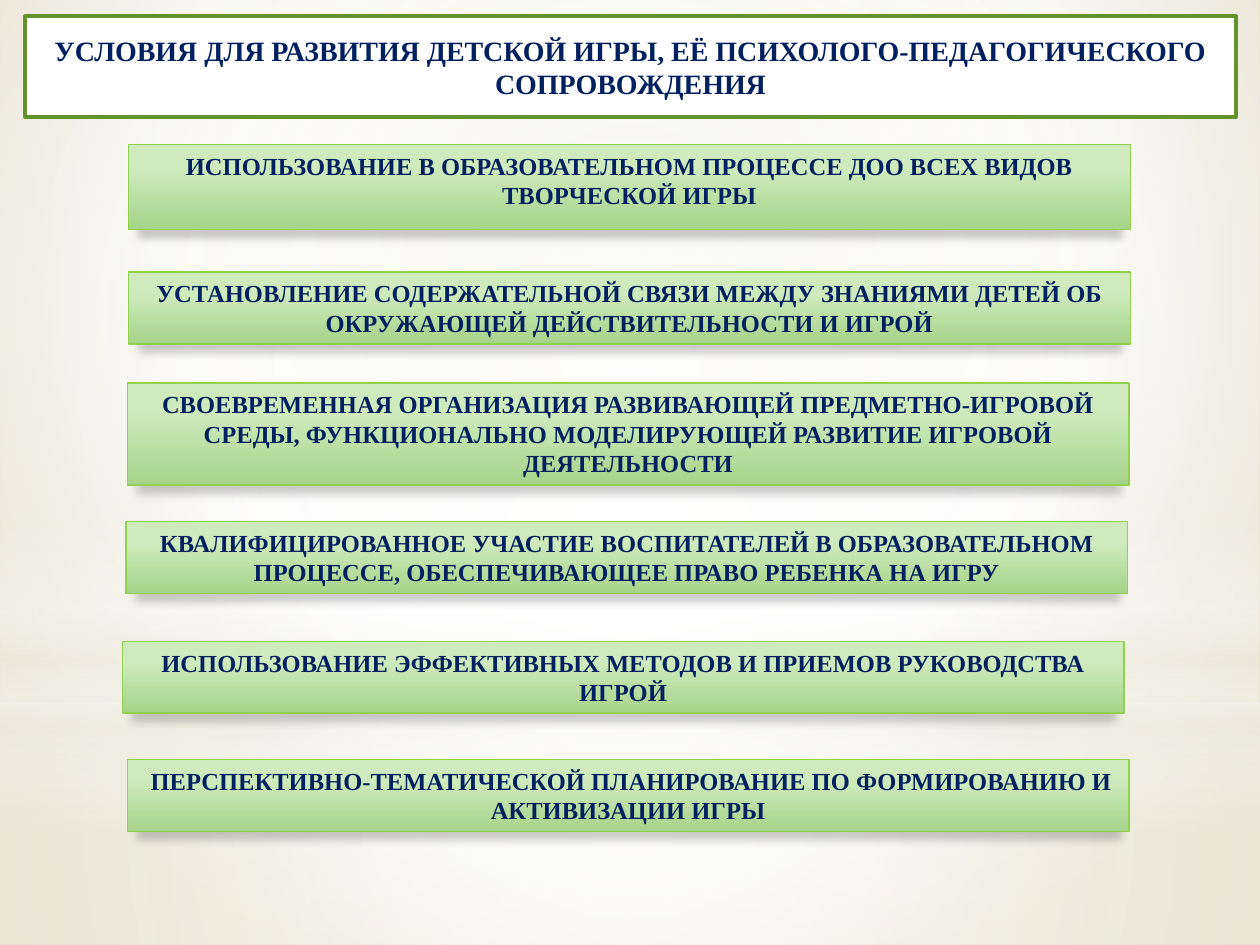
from lxml.etree import SubElement
from pptx import Presentation
from pptx.dml.color import RGBColor
from pptx.enum.shapes import MSO_SHAPE
from pptx.enum.text import MSO_ANCHOR, MSO_AUTO_SIZE, PP_ALIGN
from pptx.oxml.ns import qn
from pptx.util import Inches, Pt

COLORS = {
    "white": "FFFFFF",
    "cream": "EEECE1",
    "sand": "E7E4D4",
    "straw": "D5CC9F",
    "navy": "002060",
    "frame": "61942A",
    "edge": "92D050",
    "light": "CFEBBE",
    "leaf": "A6D389",
    "shadow": "000000",
}
CELL = 0.1
CENTER = (50, 50, 50, 50)

HEADING = "УСЛОВИЯ ДЛЯ РАЗВИТИЯ ДЕТСКОЙ ИГРЫ, ЕЁ ПСИХОЛОГО-ПЕДАГОГИЧЕСКОГО СОПРОВОЖДЕНИЯ"
CONDITIONS = [
    (10.2, 11.5, 6.7, "ИСПОЛЬЗОВАНИЕ В ОБРАЗОВАТЕЛЬНОМ ПРОЦЕССЕ ДОО ВСЕХ ВИДОВ ТВОРЧЕСКОЙ ИГРЫ"),
    (10.2, 21.6, 5.7, "УСТАНОВЛЕНИЕ СОДЕРЖАТЕЛЬНОЙ СВЯЗИ МЕЖДУ ЗНАНИЯМИ ДЕТЕЙ ОБ "
                      "ОКРУЖАЮЩЕЙ ДЕЙСТВИТЕЛЬНОСТИ И ИГРОЙ"),
    (10.1, 30.4, 8.1, "СВОЕВРЕМЕННАЯ ОРГАНИЗАЦИЯ РАЗВИВАЮЩЕЙ ПРЕДМЕТНО-ИГРОВОЙ СРЕДЫ, "
                      "ФУНКЦИОНАЛЬНО МОДЕЛИРУЮЩЕЙ РАЗВИТИЕ ИГРОВОЙ ДЕЯТЕЛЬНОСТИ"),
    (10, 41.4, 5.7, "КВАЛИФИЦИРОВАННОЕ УЧАСТИЕ ВОСПИТАТЕЛЕЙ В ОБРАЗОВАТЕЛЬНОМ "
                    "ПРОЦЕССЕ, ОБЕСПЕЧИВАЮЩЕЕ ПРАВО РЕБЕНКА НА ИГРУ"),
    (9.7, 50.9, 5.7, "ИСПОЛЬЗОВАНИЕ ЭФФЕКТИВНЫХ МЕТОДОВ И ПРИЕМОВ РУКОВОДСТВА ИГРОЙ"),
    (10.1, 60.3, 5.7, " ПЕРСПЕКТИВНО-ТЕМАТИЧЕСКОЙ ПЛАНИРОВАНИЕ ПО ФОРМИРОВАНИЮ И АКТИВИЗАЦИИ ИГРЫ"),
]


def rgb(name):
    return RGBColor.from_string(COLORS[name])


def add_color(parent, name, opacity):
    color = SubElement(parent, qn("a:srgbClr"), val=COLORS[name])
    if opacity < 100:
        SubElement(color, qn("a:alpha"), val=str(opacity * 1000))


def set_gradient(fill, properties, stops, focus=None):
    fill.solid()
    gradient = properties.find(qn("a:solidFill"))
    gradient.clear()
    gradient.tag = qn("a:gradFill")
    gradient.set("rotWithShape", "1")
    stop_list = SubElement(gradient, qn("a:gsLst"))
    for position, name, opacity in stops:
        stop = SubElement(stop_list, qn("a:gs"), pos=str(position * 1000))
        add_color(stop, name, opacity)
    if focus:
        circle = SubElement(gradient, qn("a:path"), path="circle")
        edges = {side: str(share * 1000) for side, share in zip("ltrb", focus)}
        SubElement(circle, qn("a:fillToRect"), **edges)
    else:
        SubElement(gradient, qn("a:lin"), ang="5400000", scaled="0")


class ConditionsSlide:
    font = "Times New Roman"

    def __init__(self, deck):
        self.slide = deck.slides.add_slide(deck.slide_layouts[6])

    def backdrop(self, stops, focus):
        fill = self.slide.background.fill
        fill.solid()
        properties = self.slide.element.xpath(".//p:bgPr")[0]
        set_gradient(fill, properties, stops, focus)

    def block(self, preset, column, row, columns, rows):
        area = [Inches(cells * CELL) for cells in (column, row, columns, rows)]
        block = self.slide.shapes.add_shape(preset, *area)
        block.shadow.inherit = False
        return block

    def glow(self, preset, row, rows, stops, focus=None):
        glow = self.block(preset, 0, row, 100, rows)
        glow.line.fill.background()
        set_gradient(glow.fill, glow.element.spPr, stops, focus)

    def label(self, block, words, size, anchor):
        frame = block.text_frame
        frame.text = words
        frame.word_wrap = True
        frame.vertical_anchor = anchor
        paragraph = frame.paragraphs[0]
        paragraph.alignment = PP_ALIGN.CENTER
        font = paragraph.runs[0].font
        font.name, font.size, font.bold = self.font, Pt(size), True
        font.color.rgb = rgb("navy")

    def outline(self, block, name, width):
        block.line.color.rgb = rgb(name)
        block.line.width = Pt(width)

    def heading(self, words):
        heading = self.block(MSO_SHAPE.FLOWCHART_PROCESS, 2, 1.3, 96.1, 8)
        heading.fill.solid()
        heading.fill.fore_color.rgb = rgb("white")
        self.outline(heading, "frame", 2.25)
        self.label(heading, words, 16, MSO_ANCHOR.MIDDLE)

    def condition(self, column, row, rows, words):
        condition = self.block(MSO_SHAPE.RECTANGLE, column, row, 79.5, rows)
        properties = condition.element.spPr
        set_gradient(condition.fill, properties, [(28, "light", 100), (100, "leaf", 100)])
        self.outline(condition, "edge", 0.75)
        shadow = SubElement(
            properties.find(qn("a:effectLst")), qn("a:outerShdw"),
            blurRad=str(Pt(5)), dist=str(Pt(4)), dir="5400000",
            sx="98000", sy="98000", rotWithShape="0",
        )
        add_color(shadow, "shadow", 20)
        self.label(condition, words, 14, MSO_ANCHOR.TOP)
        condition.text_frame.auto_size = MSO_AUTO_SIZE.SHAPE_TO_FIT_TEXT


def main():
    deck = Presentation()
    deck.slide_width, deck.slide_height = Inches(10), Inches(7.5)
    page = ConditionsSlide(deck)
    page.backdrop(
        [(0, "sand", 100), (60, "white", 100), (100, "straw", 100)], (20, 10, 20, 60))
    page.glow(MSO_SHAPE.RECTANGLE, 55.8, 19.2,
              [(0, "white", 91), (37, "white", 76), (100, "cream", 79)], CENTER)
    page.glow(MSO_SHAPE.RECTANGLE, 0, 55.8,
              [(0, "white", 89), (48, "white", 62), (100, "cream", 79)], CENTER)
    page.glow(MSO_SHAPE.RECTANGLE, 41.2, 25,
              [(0, "white", 0), (29, "white", 30), (45, "cream", 40),
               (55, "white", 26), (65, "cream", 60), (100, "white", 0)])
    page.glow(MSO_SHAPE.OVAL, 17.5, 55.8,
              [(0, "white", 100), (56, "white", 0)], CENTER)
    page.heading(HEADING)
    for condition in CONDITIONS:
        page.condition(*condition)
    deck.save("out.pptx")


if __name__ == "__main__":
    main()
